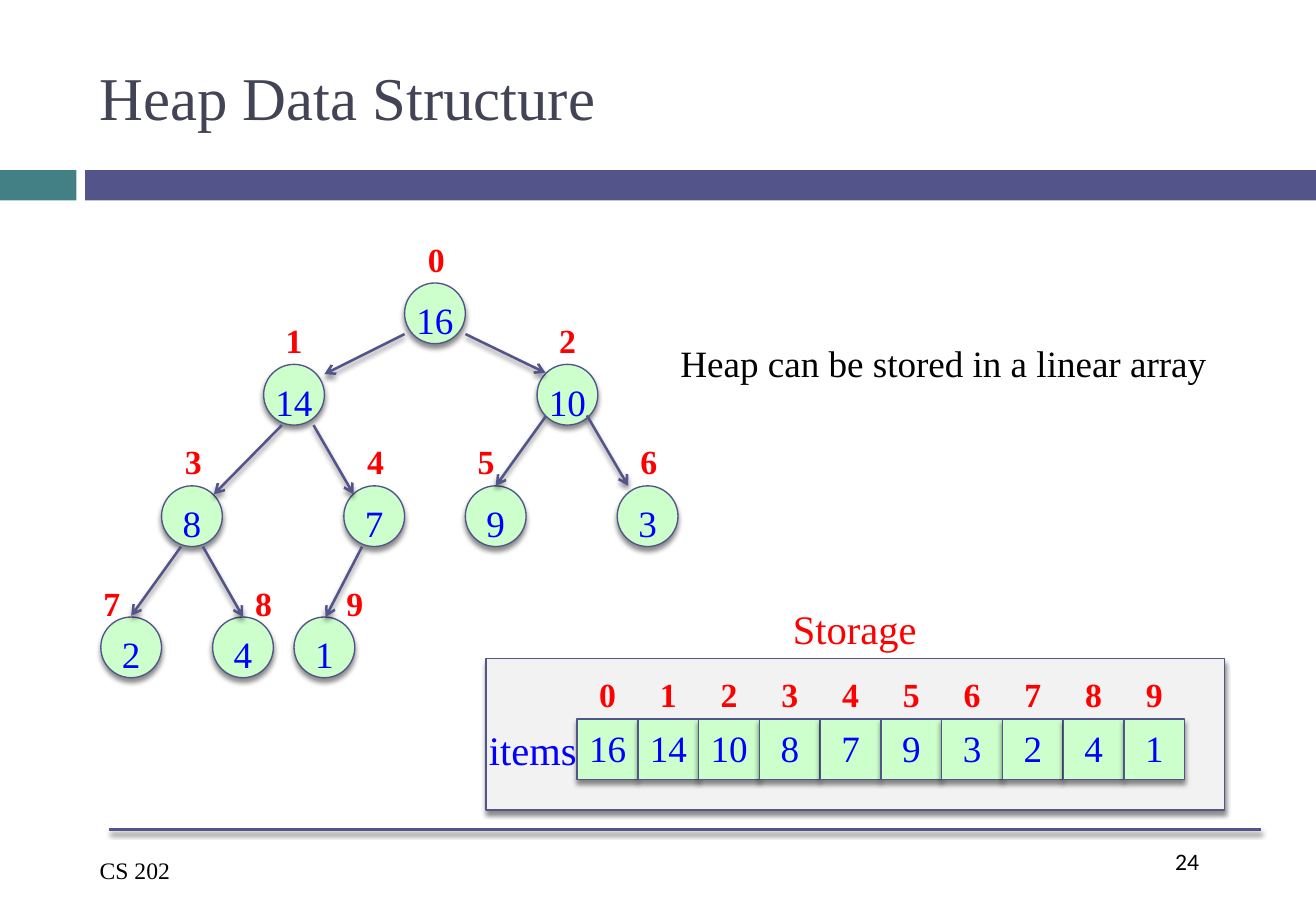
"""Build a slide that shows a heap as a tree and as a linear array."""
from lxml import etree
from pptx import Presentation
from pptx.dml.color import RGBColor
from pptx.enum.shapes import MSO_CONNECTOR, MSO_SHAPE
from pptx.enum.text import MSO_ANCHOR, MSO_AUTO_SIZE, PP_ALIGN
from pptx.oxml.ns import qn
from pptx.util import Inches, Pt

RECT, OVAL = MSO_SHAPE.RECTANGLE, MSO_SHAPE.OVAL
STRAIGHT = MSO_CONNECTOR.STRAIGHT
TOP, MIDDLE = MSO_ANCHOR.TOP, MSO_ANCHOR.MIDDLE
LEFT, CENTER = PP_ALIGN.LEFT, PP_ALIGN.CENTER
FIXED = MSO_AUTO_SIZE.NONE

TEAL = RGBColor(0x43, 0x80, 0x86)
PURPLE = RGBColor(0x53, 0x54, 0x8A)
SLATE = RGBColor(0x42, 0x44, 0x56)
GREEN = RGBColor(0xCC, 0xFF, 0xCC)
GRAY = RGBColor(0xF2, 0xF2, 0xF2)
BLUE = RGBColor(0x00, 0x00, 0xFF)
RED = RGBColor(0xFF, 0x00, 0x00)
BLACK = RGBColor(0x00, 0x00, 0x00)

SIDE = 0.5
HEAP = [16, 14, 10, 8, 7, 9, 3, 2, 4, 1]
LEVELS = [
    (2.33, 1.92, [(3.33, 3.42)]),
    (3.0, 2.58, [(2.17, 2.25), (4.42, 4.5)]),
    (4.0, 3.58, [(1.33, 1.42), (2.83, 2.92), (3.83, 3.83), (5.08, 5.17)]),
    (5.08, 4.75, [(0.83, 0.75), (1.75, 2.0), (2.42, 2.75)]),
]
EDGES = [
    (3.33, 2.75, 2.67, 3.08), (3.83, 2.75, 4.49, 3.07),
    (2.32, 3.5, 1.76, 4.07), (2.58, 3.5, 2.91, 4.07),
    (4.49, 3.43, 4.08, 4.0), (4.83, 3.42, 5.17, 4.0),
    (1.49, 4.5, 1.08, 5.07), (1.67, 4.5, 2.0, 5.08),
    (2.98, 4.5, 2.68, 5.08),
]


class Board:
    """Hold the slide and the style of its elements."""

    def __init__(self, slide, font="Times New Roman"):
        self.slide = slide
        self.font = font

    def letter(self, frame, text, size, color, align=LEFT, bold=False, font=None):
        frame.word_wrap = True
        frame.auto_size = FIXED
        frame.vertical_anchor = TOP
        frame.margin_left = frame.margin_right = 0
        frame.margin_top = frame.margin_bottom = Inches(0.05)
        para = frame.paragraphs[0]
        para.alignment = align
        run = para.add_run()
        run.text = text
        run.font.name = font or self.font
        run.font.size = Pt(size)
        run.font.bold = bold
        run.font.color.rgb = color

    def title(self, text, x, y, w, h):
        head = self.slide.shapes.title
        head.left, head.top = Inches(x), Inches(y)
        head.width, head.height = Inches(w), Inches(h)
        self.letter(head.text_frame, text, 36, SLATE)
        head.text_frame.vertical_anchor = MIDDLE

    def label(self, text, x, y, w, h, size, color, **style):
        box = self.slide.shapes.add_textbox(Inches(x), Inches(y), Inches(w), Inches(h))
        self.letter(box.text_frame, text, size, color, **style)

    def index(self, num, x, y):
        self.label(str(num), x, y, 0.34, 0.44, 20, RED, align=CENTER, bold=True)

    def shade(self, item):
        props = item.element.spPr
        effects = props.find(qn("a:effectLst"))
        if effects is None:
            effects = etree.SubElement(props, qn("a:effectLst"))
        shadow = etree.SubElement(effects, qn("a:outerShdw"), blurRad=str(Pt(3)),
                                  dist=str(Pt(2.4)), dir="5400000", rotWithShape="0")
        color = etree.SubElement(shadow, qn("a:srgbClr"), val=str(BLACK))
        etree.SubElement(color, qn("a:alpha"), val="45000")

    def shape(self, kind, x, y, w, h, fill, edged=True):
        item = self.slide.shapes.add_shape(kind, Inches(x), Inches(y), Inches(w), Inches(h))
        item.fill.solid()
        item.fill.fore_color.rgb = fill
        item.shadow.inherit = False
        if edged:
            item.line.color.rgb = PURPLE
            item.line.width = Pt(0.79)
            self.shade(item)
        else:
            item.line.fill.background()
        return item

    def cell(self, kind, value, x, y):
        item = self.shape(kind, x, y, SIDE, SIDE, GREEN)
        self.letter(item.text_frame, str(value), 22, BLUE, align=CENTER)

    def line(self, x1, y1, x2, y2, arrow=False):
        item = self.slide.shapes.add_connector(
            STRAIGHT, Inches(x1), Inches(y1), Inches(x2), Inches(y2))
        item.line.color.rgb = PURPLE
        item.line.width = Pt(1.5)
        if arrow:
            stroke = item.element.spPr.find(qn("a:ln"))
            etree.SubElement(stroke, qn("a:tailEnd"), type="arrow")
        self.shade(item)


def main():
    deck = Presentation()
    deck.slide_width, deck.slide_height = Inches(10.83), Inches(7.5)
    board = Board(deck.slides.add_slide(deck.slide_layouts[5]))

    board.title("Heap Data Structure", 0.82, 0.25, 9.46, 1.08)
    board.shape(RECT, 0, 1.4, 0.63, 0.25, TEAL, edged=False)
    board.shape(RECT, 0.7, 1.4, 10.13, 0.25, PURPLE, edged=False)
    board.label("24", 9.67, 6.92, 0.61, 0.5, 14, BLACK, font="Calibri")
    board.line(0.9, 6.83, 10.38, 6.83)
    board.label("CS 202", 0.82, 7, 1.79, 0.34, 14, BLACK)
    board.shape(RECT, 4, 5.42, 6.08, 1.25, GRAY)

    spots = [(x, y, tag_x, tag_y) for y, tag_y, row in LEVELS for x, tag_x in row]
    for value, (x, y, _, _) in zip(HEAP, spots):
        board.cell(OVAL, value, x, y)
    for edge in EDGES:
        board.line(*edge, arrow=True)
    for num, (_, _, x, y) in enumerate(spots):
        board.index(num, x, y)

    for num, value in enumerate(HEAP):
        x = 4.75 + num * SIDE
        board.cell(RECT, value, x, 5.92)
        board.index(num, x + 0.08, 5.5)
    board.label("items", 3.97, 5.92, 0.83, 0.5, 24, BLUE, align=CENTER)
    board.label("Storage", 6.42, 4.92, 1.23, 0.5, 24, RED, align=CENTER)
    board.label("Heap can be stored in a linear array", 5.6, 2.75, 4.48, 0.47, 22, BLACK)

    deck.save("out.pptx")


if __name__ == "__main__":
    main()
